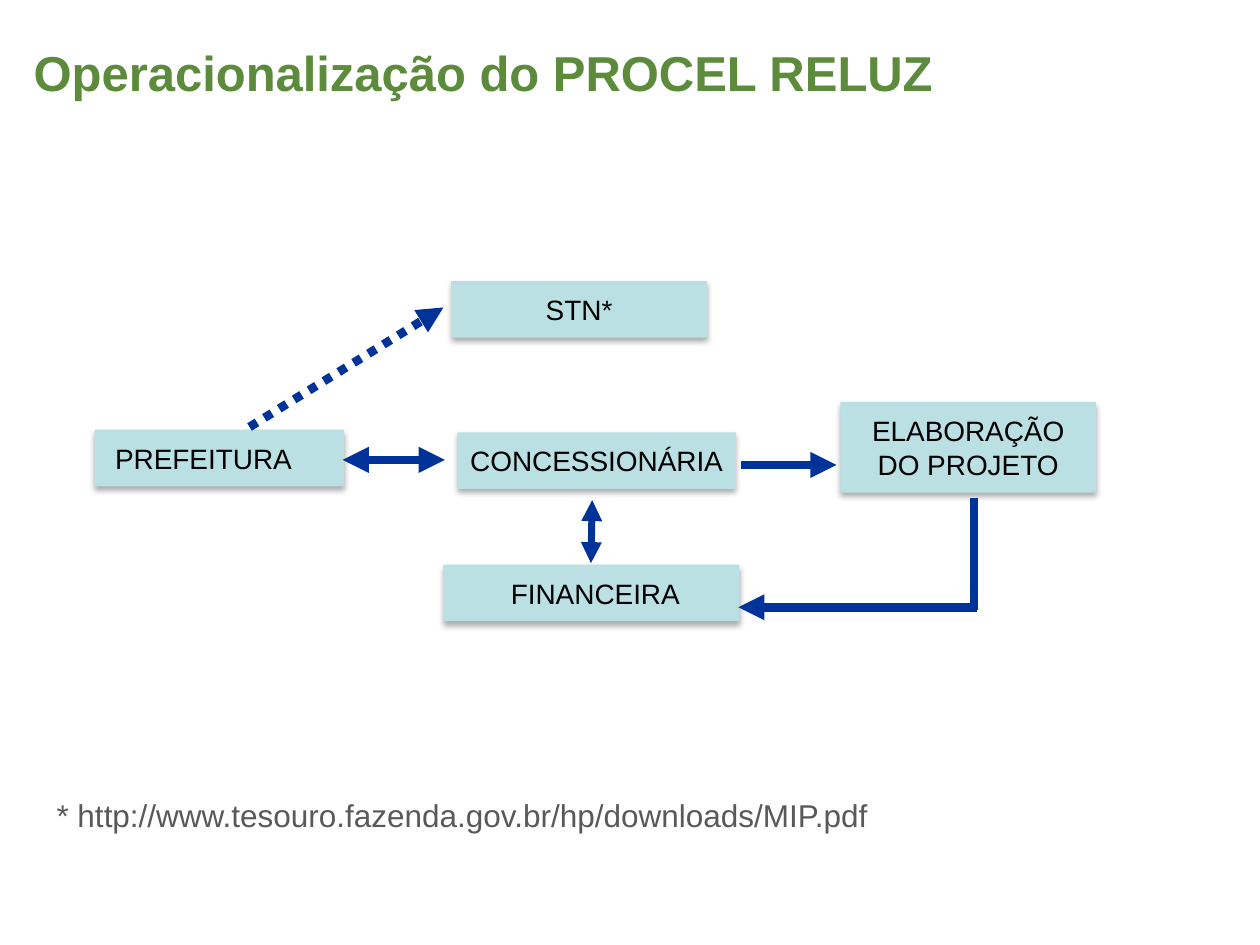
from dataclasses import dataclass

from lxml.etree import SubElement as Sub
from pptx import Presentation
from pptx.dml.color import RGBColor as Color
from pptx.enum.dml import MSO_LINE as Dash
from pptx.enum.shapes import MSO_CONNECTOR as Link, MSO_SHAPE as Form
from pptx.enum.text import MSO_ANCHOR as Anchor, PP_ALIGN as Align
from pptx.oxml.ns import qn
from pptx.util import Pt


@dataclass(frozen=True)
class Theme:
    """Hold the colours, font and type sizes of the slide."""
    font: str = "Arial"
    green: str = "5B8B3B"
    aqua: str = "BBE0E3"
    navy: str = "003399"
    black: str = "000000"
    grey: str = "595959"
    head: int = 28
    note: int = 18
    label: int = 16


THEME = Theme()


def write(frame, text, size, tint, bold=False):
    """Put one styled paragraph into a text frame."""
    frame.text = text
    font = frame.paragraphs[0].runs[0].font
    font.name, font.size, font.bold = THEME.font, Pt(size), bold
    font.color.rgb = Color.from_string(tint)


def add_text(slide, area, text, size, tint, bold=False):
    """Add a wrapping text box."""
    box = slide.shapes.add_textbox(*map(Pt, area))
    box.text_frame.word_wrap = True
    write(box.text_frame, text, size, tint, bold)


def add_shade(shape):
    """Give a shape a soft shadow below it."""
    shape.shadow.inherit = False
    effects = shape._element.spPr.find(qn("a:effectLst"))
    shade = Sub(effects, qn("a:outerShdw"), blurRad=str(Pt(3.5)),
                dist=str(Pt(2.2)), dir="5400000", rotWithShape="0")
    tint = Sub(shade, qn("a:srgbClr"), val=THEME.black)
    Sub(tint, qn("a:alpha"), val="32000")


def add_box(slide, area, text, left=6.5, right=6.5, wrap=True):
    """Add a shaded box with a centred label."""
    box = slide.shapes.add_shape(Form.RECTANGLE, *map(Pt, area))
    box.fill.solid()
    box.fill.fore_color.rgb = Color.from_string(THEME.aqua)
    box.line.fill.background()
    add_shade(box)
    frame = box.text_frame
    frame.margin_left, frame.margin_right = Pt(left), Pt(right)
    frame.margin_top = frame.margin_bottom = Pt(6.5)
    frame.vertical_anchor = Anchor.MIDDLE
    frame.word_wrap = wrap
    write(frame, text, THEME.label, THEME.black)
    frame.paragraphs[0].alignment = Align.CENTER


def add_line(slide, ends, heads=(), width=5, dash=None):
    """Add a line with arrowheads at the named ends."""
    link = slide.shapes.add_connector(Link.STRAIGHT, *map(Pt, ends))
    line = link.line
    line.width = Pt(width)
    line.color.rgb = Color.from_string(THEME.navy)
    if dash:
        line.dash_style = dash
    props = link._element.spPr
    for head in heads:
        Sub(props.find(qn("a:ln")), qn(f"a:{head}"), type="triangle")
    Sub(props, qn("a:effectLst"))


def main():
    """Build and save the slide."""
    deck = Presentation()
    deck.slide_width, deck.slide_height = Pt(720), Pt(540)
    slide = deck.slides.add_slide(deck.slide_layouts[6])
    both, tail = ("headEnd", "tailEnd"), ("tailEnd",)

    add_box(slide, (253.4, 322.6, 169.2, 32.4), "FINANCEIRA", left=11)
    add_box(slide, (261.4, 247, 159.1, 32.4), "CONCESSIONÁRIA", wrap=False)
    add_box(slide, (54, 245.5, 142.6, 32.4), "PREFEITURA", right=24.5)
    add_box(slide, (480.2, 229.7, 146.2, 51.8), "ELABORAÇÃO DO PROJETO")
    add_box(slide, (257.8, 160.6, 146.2, 32.4), "STN*")

    add_line(slide, (338.4, 285.8, 337.7, 321.8), both, width=4)
    add_line(slide, (195.8, 262.8, 254.2, 262.8), both)
    add_line(slide, (423.4, 265.7, 478, 265.7), tail)
    add_line(slide, (556.6, 284.4, 556.6, 348.5))
    add_line(slide, (558, 347, 421.9, 347), tail)
    add_line(slide, (142.6, 244, 253.4, 175.7), tail, dash=Dash.ROUND_DOT)

    add_text(slide, (12.2, 20.9, 707.8, 43.2),
             "Operacionalização do PROCEL RELUZ",
             THEME.head, THEME.green, bold=True)
    add_text(slide, (25.2, 451.4, 504.7, 28.8),
             "* http://www.tesouro.fazenda.gov.br/hp/downloads/MIP.pdf",
             THEME.note, THEME.grey)
    deck.save("out.pptx")


if __name__ == "__main__":
    main()
